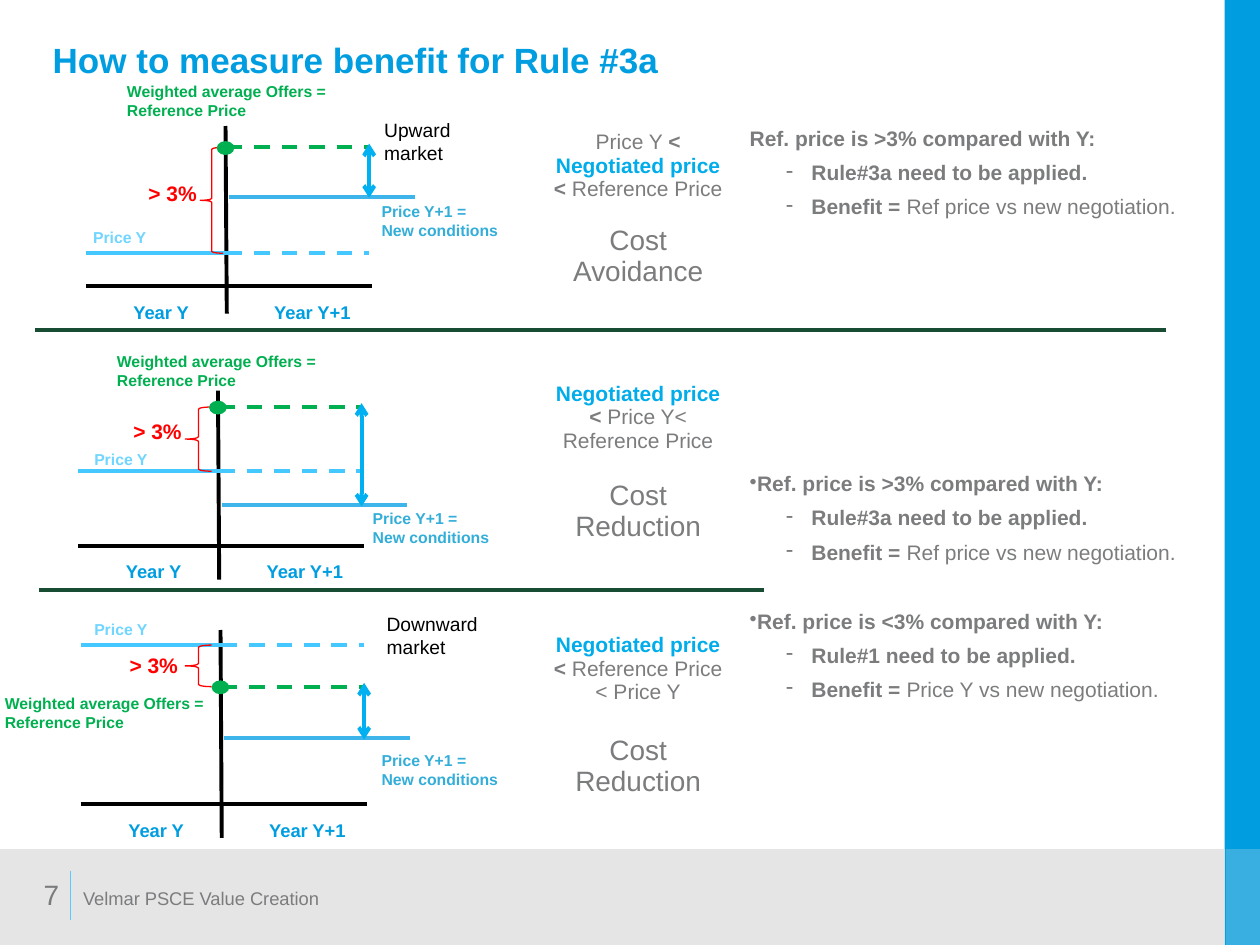
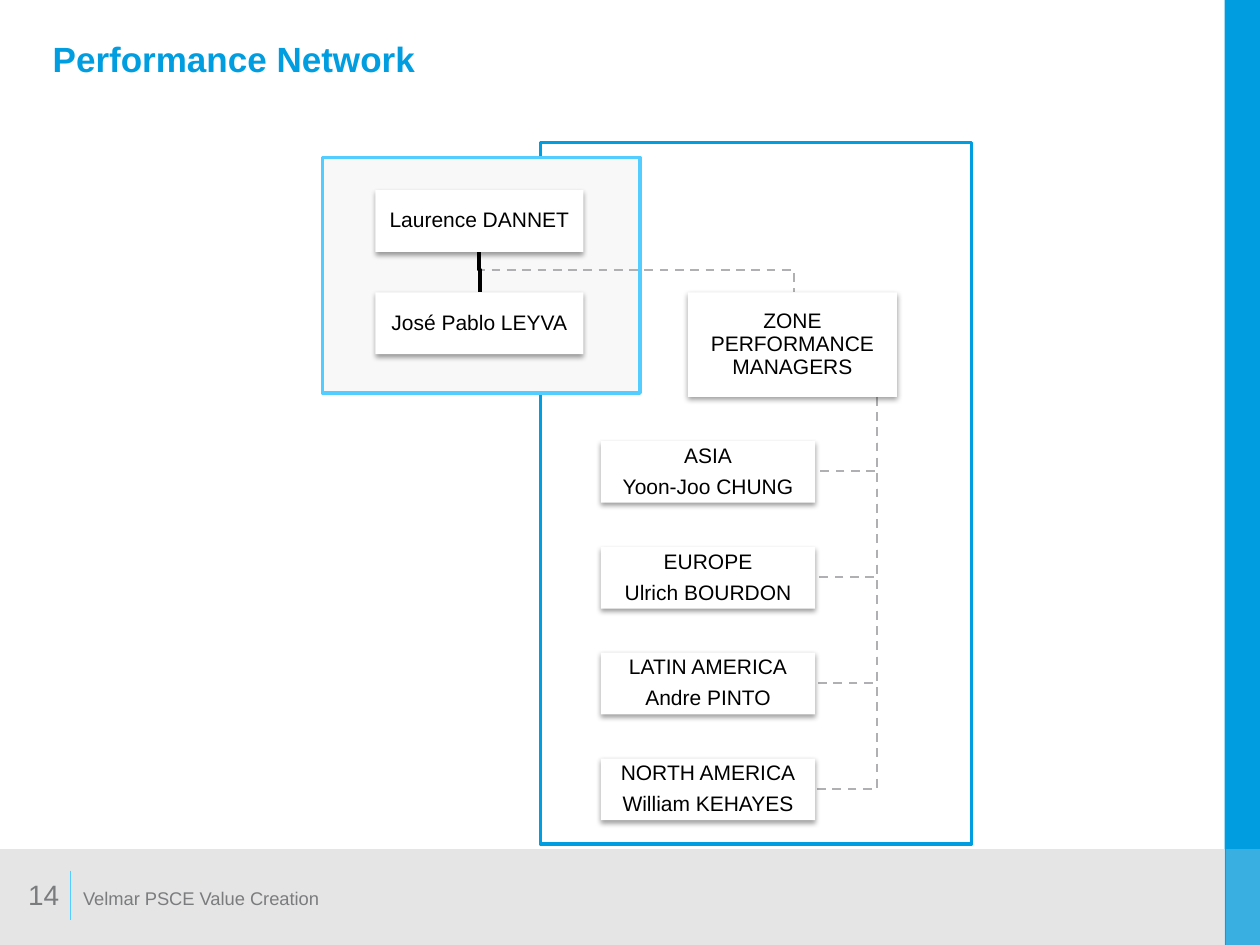
"""Build the price-rule benefit slide and the performance network slide."""
from dataclasses import dataclass

from lxml.etree import SubElement
from pptx import Presentation
from pptx.dml.color import RGBColor
from pptx.enum.dml import MSO_LINE
from pptx.enum.shapes import MSO_CONNECTOR, MSO_SHAPE
from pptx.enum.text import MSO_ANCHOR, PP_ALIGN
from pptx.oxml.ns import qn
from pptx.util import Pt

SCALE = 9144


@dataclass(frozen=True)
class Theme:
    font: str = "Arial"
    white: str = "FFFFFF"
    black: str = "000000"
    grey: str = "7B7C7E"
    band: str = "E5E5E5"
    panel: str = "F8F8F8"
    link: str = "B0B0B2"
    blue: str = "009EE0"
    sky: str = "53CCFF"
    negotiated: str = "00ADEA"
    price_y: str = "45C8FF"
    price_y_label: str = "70D5FF"
    new_price: str = "3DB5EB"
    new_label: str = "33AED9"
    gap: str = "00B0F0"
    offers: str = "00B050"
    alert: str = "FF0000"
    divider: str = "194D33"
    title_size: float = 20
    large: float = 16
    body: float = 12
    market: float = 11
    small: float = 10.5
    label: float = 9


@dataclass(frozen=True)
class Market:
    axis: int
    top: int
    bottom: int
    base: int
    price_y: int
    reference: int
    new_price: int
    price_y_at: tuple
    new_at: tuple
    offers_at: tuple
    alert_at: tuple
    brace_at: tuple


THEME = Theme()
FOOTER = "Velmar PSCE Value Creation"

MARKETS = [
    Market(180, 100, 249, 227, 201, 117, 156, (64, 176), (293, 155),
           (91, 60), (108, 138), (159, 18)),
    Market(174, 310, 460, 433, 374, 323, 401, (65, 352), (286, 399),
           (83, 274), (96, 327), (147, 21)),
    Market(176, 500, 665, 638, 512, 545, 586, (65, 487), (293, 591),
           (-6, 546), (93, 513), (147, 21)),
]

NEGOTIATED = ("Negotiated price ", True, THEME.negotiated)
LESS = ("< ", True)
OUTCOMES = [
    ([("Price Y ",), LESS, NEGOTIATED, LESS, ("Reference Price",)], "Cost Avoidance", 14),
    ([NEGOTIATED, LESS, ("Price Y< Reference Price",)], "Cost Reduction", 16),
    ([NEGOTIATED, LESS, ("Reference Price < Price Y",)], "Cost Reduction", 18),
]

ZONES = [
    ("ASIA", "Yoon-Joo CHUNG"),
    ("EUROPE", "Ulrich BOURDON"),
    ("LATIN AMERICA", "Andre PINTO"),
    ("NORTH AMERICA", "William KEHAYES"),
]


def emu(*lengths):
    return [round(length * SCALE) for length in lengths]


def rgb(color):
    return RGBColor.from_string(color)


class Deck:
    def __init__(self, theme):
        self.theme = theme
        self.prs = Presentation()
        self.prs.slide_width, self.prs.slide_height = emu(1000, 750)
        self.slide = None

    def new_slide(self, title, number, title_top):
        theme = self.theme
        self.slide = self.prs.slides.add_slide(self.prs.slide_layouts[6])
        self.shape((972, 0, 28, 750), fill=theme.blue)
        self.shape((0, 674, 972, 76), fill=theme.band)
        corner = self.shape((973, 674, 27, 76), fill=theme.band)
        tint = next(corner.element.spPr.iter(qn("a:srgbClr")))
        SubElement(tint, qn("a:alpha"), val="25000")
        self.line((56, 691), (56, 730), theme.sky, 0.75)
        self.text((32, title_top, 913, 78), [title], theme.title_size, theme.blue,
                  bold=True, anchor=MSO_ANCHOR.MIDDLE, spacing=0.95)
        self.text((66, 704, 630, 28), [FOOTER], theme.small, theme.grey, inset=0)
        self.text((0, 690, 47, 39), [number], theme.large, theme.grey, inset=0,
                  align=PP_ALIGN.RIGHT, anchor=MSO_ANCHOR.MIDDLE)

    def style(self, run, size, color, bold=False):
        run.font.name = self.theme.font
        run.font.size = Pt(size)
        run.font.bold = bold
        run.font.color.rgb = rgb(color)

    def fill_frame(self, frame, lines, size, color, bold=False, align=PP_ALIGN.LEFT,
                   anchor=MSO_ANCHOR.TOP, spacing=None, after=None, inset=None):
        frame.word_wrap = True
        frame.vertical_anchor = anchor
        if inset is not None:
            frame.margin_left = frame.margin_right = emu(inset)[0]
            frame.margin_top = frame.margin_bottom = emu(inset)[0]
        frame.text = "\n".join(lines)
        for paragraph in frame.paragraphs:
            paragraph.alignment = align
            paragraph.line_spacing = spacing
            paragraph.space_after = after
            for run in paragraph.runs:
                self.style(run, size, color, bold)

    def text(self, box, lines, size, color, **options):
        frame = self.slide.shapes.add_textbox(*emu(*box)).text_frame
        self.fill_frame(frame, lines, size, color, **options)

    def paint(self, shape, fill=None, line=None, width=1.0, dashed=False):
        shape.shadow.inherit = False
        if fill:
            shape.fill.solid()
            shape.fill.fore_color.rgb = rgb(fill)
        else:
            shape.fill.background()
        if line:
            shape.line.color.rgb = rgb(line)
            shape.line.width = Pt(width)
            if dashed:
                shape.line.dash_style = MSO_LINE.DASH
        else:
            shape.line.fill.background()
        return shape

    def shape(self, box, preset=MSO_SHAPE.RECTANGLE, **look):
        return self.paint(self.slide.shapes.add_shape(preset, *emu(*box)), **look)

    def line(self, start, end, color, width=2.25, dashed=False, arrows=False):
        connector = self.slide.shapes.add_connector(
            MSO_CONNECTOR.STRAIGHT, *emu(*start, *end))
        connector.line.color.rgb = rgb(color)
        connector.line.width = Pt(width)
        if dashed:
            connector.line.dash_style = MSO_LINE.DASH
        if arrows:
            outline = connector.line._get_or_add_ln()
            for tip in ("a:headEnd", "a:tailEnd"):
                SubElement(outline, qn(tip), type="arrow")
        SubElement(connector.element.spPr, qn("a:effectLst"))

    def path_line(self, points, color, width, dashed=False):
        builder = self.slide.shapes.build_freeform(*points[0], scale=SCALE)
        builder.add_line_segments(points[1:], close=False)
        self.paint(builder.convert_to_shape(), line=color, width=width, dashed=dashed)

    def card(self, box, lines):
        card = self.shape(box, fill=self.theme.white)
        effects = card.element.spPr.find(qn("a:effectLst"))
        shadow = SubElement(effects, qn("a:outerShdw"), blurRad=str(Pt(3.1)),
                            dist=str(Pt(1.6)), dir="5400000", rotWithShape="0")
        tint = SubElement(shadow, qn("a:srgbClr"), val=self.theme.black)
        SubElement(tint, qn("a:alpha"), val="38000")
        self.fill_frame(card.text_frame, lines, self.theme.body, self.theme.black,
                        align=PP_ALIGN.CENTER, anchor=MSO_ANCHOR.MIDDLE,
                        spacing=0.9, after=Pt(4.8), inset=1)

    def table(self, box, widths, heights):
        table = self.slide.shapes.add_table(len(heights), len(widths), *emu(*box)).table
        table.first_row = table.horz_banding = False
        for column, width in zip(table.columns, emu(*widths)):
            column.width = width
        for row, height in zip(table.rows, emu(*heights)):
            row.height = height
        for cell in table.iter_cells():
            cell.fill.background()
            cell.vertical_anchor = MSO_ANCHOR.MIDDLE
        return table

    def cell_paragraph(self, cell, spans, before=0, size=None, align=PP_ALIGN.LEFT,
                       bullet=None, margin=0, hanging=0, level=0):
        frame = cell.text_frame
        first = not frame.paragraphs[0].runs
        paragraph = frame.paragraphs[0] if first else frame.add_paragraph()
        paragraph.alignment = align
        paragraph.level = level
        if bullet:
            props = paragraph._p.get_or_add_pPr()
            props.set("marL", str(margin * SCALE))
            props.set("indent", str(-hanging * SCALE))
            SubElement(props, qn("a:buChar"), char=bullet)
        if not first:
            paragraph.space_before = Pt(before)
        for words, bold, color in (
                (*span, False, self.theme.grey)[:3] if len(span) == 1
                else (*span, self.theme.grey)[:3] for span in spans):
            run = paragraph.add_run()
            run.text = words
            self.style(run, size or self.theme.body, color, bold)

    def advice(self, cell, sign, rule, basis, bullet=None, before=0):
        self.cell_paragraph(cell, [(f"Ref. price is {sign}3% compared with Y:", True)],
                            before, bullet=bullet, hanging=21)
        for spans in ([(f"Rule#{rule} need to be applied.", True)],
                      [("Benefit = ", True), (f"{basis} vs new negotiation.",)]):
            self.cell_paragraph(cell, spans, 6, bullet="-", margin=49, hanging=20, level=1)

    def market(self, m):
        theme, x = self.theme, m.axis
        end = x + 113
        self.line((x - 1, m.top), (x, m.bottom), theme.black)
        self.line((x - 112, m.base), (x + 115, m.base), theme.black)
        for words, left, width in (("Year Y", x - 95, 86), ("Year Y+1", x + 21, 94)):
            self.text((left, m.base + 7, width, 28), [words], theme.small, theme.blue,
                      bold=True, align=PP_ALIGN.CENTER)
        self.line((x - 112, m.price_y), (x, m.price_y), theme.price_y)
        self.line((x, m.price_y), (end, m.price_y), theme.price_y, dashed=True)
        self.line((x, m.reference), (end, m.reference), theme.offers, dashed=True)
        self.line((x + 2, m.new_price), (x + 149, m.new_price), theme.new_price)
        self.line((end, m.reference - 3), (end, m.new_price + 1), theme.gap, arrows=True)
        for lines, at, size, color in (
                (["Weighted average Offers =", "Reference Price"], (*m.offers_at, 183, 40),
                 theme.label, theme.offers),
                (["Price Y"], (*m.price_y_at, 73, 25), theme.label, theme.price_y_label),
                (["Price Y+1 =", "New conditions"], (*m.new_at, 117, 40),
                 theme.label, theme.new_label),
                (["> 3%"], (*m.alert_at, 70, 30), theme.body, theme.alert)):
            self.text(at, lines, size, color, bold=True)
        brace_left, brace_width = m.brace_at
        self.shape((brace_left, min(m.reference, m.price_y), brace_width,
                    abs(m.reference - m.price_y)), MSO_SHAPE.LEFT_BRACE,
                   line=theme.alert, width=0.75)
        self.shape((x - 8, m.reference - 5, 14, 11), MSO_SHAPE.OVAL, fill=theme.offers)


def build_benefit(deck):
    theme = deck.theme
    deck.new_slide("How to measure benefit for Rule #3a", "7", 10)
    rules = deck.table((35, 67, 920, 600), (230, 163, 157, 370), (198, 204, 198))
    rules.cell(1, 3).merge(rules.cell(2, 3))
    for row, (comparison, outcome, gap) in enumerate(OUTCOMES):
        cell = rules.cell(row, 2)
        deck.cell_paragraph(cell, comparison, align=PP_ALIGN.CENTER)
        deck.cell_paragraph(cell, [(outcome,)], gap, theme.large, PP_ALIGN.CENTER)
    upward, downward = rules.cell(0, 3), rules.cell(1, 3)
    for cell in (upward, downward):
        cell.margin_right = emu(4)[0]
    upward.vertical_anchor = MSO_ANCHOR.TOP
    upward.margin_top = emu(34)[0]
    deck.advice(upward, ">", "3a", "Ref price")
    deck.advice(downward, ">", "3a", "Ref price", "•")
    deck.advice(downward, "<", "1", "Price Y", "•", 26)
    for market in MARKETS:
        deck.market(market)
    deck.line((28, 262), (925, 262), theme.divider)
    deck.line((31, 468), (606, 468), theme.divider)
    deck.text((295, 89, 115, 47), ["Upward market"], theme.market, theme.black)
    deck.text((297, 481, 134, 47), ["Downward market"], theme.market, theme.black)


def build_network(deck):
    theme = deck.theme
    deck.new_slide("Performance Network", "14", 9)
    deck.shape((429, 113, 342, 557), MSO_SHAPE.FLOWCHART_PROCESS, line=theme.blue, width=2)
    deck.shape((256, 125, 252, 187), MSO_SHAPE.FLOWCHART_PROCESS,
               fill=theme.panel, line=theme.sky, width=2)
    zone_tops = [350 + 84 * i for i in range(len(ZONES))]
    for top in reversed(zone_tops):
        deck.path_line([(696, 315), (696, top + 24), (647, top + 24)],
                       theme.link, 1.25, dashed=True)
    deck.path_line([(380, 200), (380, 214), (630, 214), (630, 232)],
                   theme.link, 1.25, dashed=True)
    deck.path_line([(380, 200), (380, 214), (381, 214), (381, 232)], theme.black, 2)
    deck.card((298, 151, 165, 49), ["Laurence DANNET"])
    deck.card((298, 232, 165, 49), ["José Pablo LEYVA"])
    deck.card((546, 232, 166, 83), ["ZONE PERFORMANCE MANAGERS"])
    for top, zone in zip(zone_tops, ZONES):
        deck.card((477, top, 170, 49), zone)


def main():
    deck = Deck(THEME)
    build_benefit(deck)
    build_network(deck)
    deck.prs.save("out.pptx")


if __name__ == "__main__":
    main()
